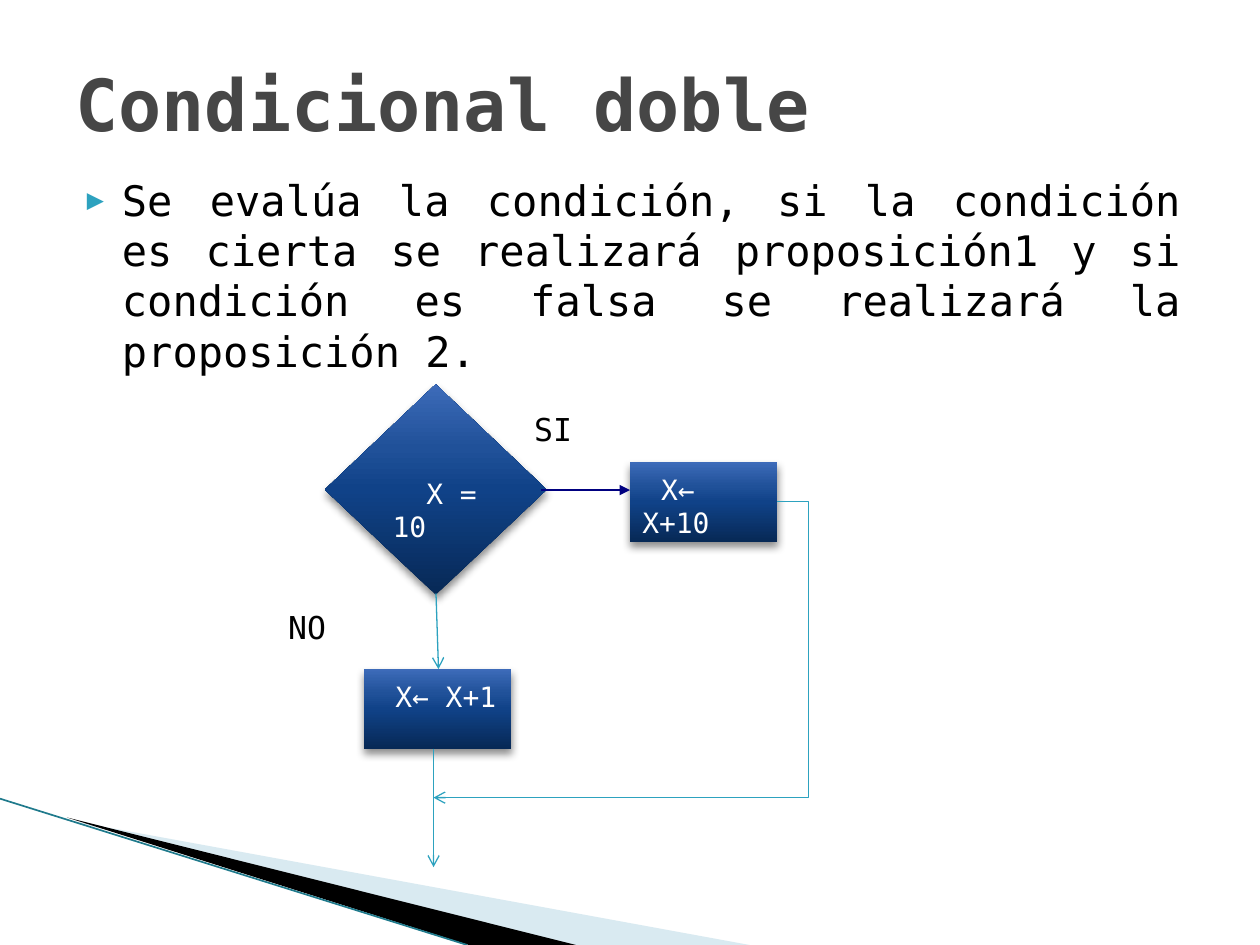
import lxml.etree
import pptx
import pptx.util
import pptx.dml.color
import pptx.enum.shapes
import pptx.enum.text
import pptx.oxml.ns

Cm = pptx.util.Cm
Pt = pptx.util.Pt
KIND = pptx.enum.shapes.MSO_SHAPE
LINK = pptx.enum.shapes.MSO_CONNECTOR
ALIGN = pptx.enum.text.PP_ALIGN
ANCHOR = pptx.enum.text.MSO_ANCHOR

FONT = "DejaVu Sans Mono"
HUES = {"ink": "000000", "title": "464646", "white": "FFFFFF", "teal": "2DA2BF",
        "navy": "000080", "pale": "A0CBDC", "edge": "1F7A8C"}
BLEND = [(0, "072956"), (50, "104288"), (70, "205199"), (100, "3D6BB9")]

TITLE = "Condicional doble"
BODY = ("Se evalúa la condición, si la condición es cierta se realizará "
        "proposición1 y si condición es falsa se realizará la proposición 2.")
NODES = [
    (KIND.FLOWCHART_DECISION, (6.55, 7.75, 4.47, 4.24), "X = 10", 0.68, 0.79),
    (KIND.FLOWCHART_PROCESS, (12.7, 9.32, 2.97, 1.6), "X← X+10", 0.38, 0.2),
    (KIND.FLOWCHART_PROCESS, (7.34, 13.49, 2.97, 1.6), "X← X+1", 0.38, 0.2),
]
LABELS = [("SI", (10.52, 8.13, 1.98, 1.02)), ("NO", (5.56, 12.12, 1.98, 1.02))]
ARROWS = [
    (LINK.STRAIGHT, (10.9, 9.88, 12.7, 9.88), "navy", "triangle"),
    (LINK.ELBOW, (15.67, 10.11, 8.74, 16.08), "teal", "arrow"),
    (LINK.STRAIGHT, (8.79, 11.96, 8.84, 13.49), "teal", "arrow"),
    (LINK.STRAIGHT, (8.74, 15.09, 8.74, 17.48), "teal", "arrow"),
]
WEDGES = [
    ([(1.4, 16.54), (15.11, 19.05), (11.58, 19.05)], "pale", 40),
    ([(1.35, 16.48), (11.61, 19.05), (9.45, 19.05)], "ink", 100),
]


def hue(name):
    return pptx.dml.color.RGBColor.from_string(HUES[name])


def node(root, tag, **keys):
    item = lxml.etree.SubElement(root, pptx.oxml.ns.qn("a:" + tag))
    for key, val in keys.items():
        item.set(key, str(val))
    return item


def find(root, tag):
    return root.find(".//" + pptx.oxml.ns.qn("a:" + tag))


def write(shape, text, size=18, color="ink", bold=False, align=ALIGN.LEFT,
          anchor=ANCHOR.TOP, left=0, first=0, top=0.13, low=0.13, bullet=None):
    frame = shape.text_frame
    frame.word_wrap = True
    frame.vertical_anchor = anchor
    frame.margin_top, frame.margin_bottom = Cm(top), Cm(low)
    para = frame.paragraphs[0]
    para.alignment = align
    props = para._p.get_or_add_pPr()
    props.set("marL", str(Cm(left)))
    props.set("indent", str(Cm(first)))
    if bullet:
        node(node(props, "buClr"), "srgbClr", val=HUES["teal"])
        node(props, "buSzPct", val=68000)
        node(props, "buFont", typeface=FONT)
        node(props, "buChar", char=bullet)
    run = para.add_run()
    run.text = text
    run.font.name, run.font.size, run.font.bold = FONT, Pt(size), bold
    run.font.color.rgb = hue(color)


def box(slide, place):
    return slide.shapes.add_textbox(*map(Cm, place))


def wedge(slide, dots, color, alpha):
    dots = [(Cm(x), Cm(y)) for x, y in dots]
    form = slide.shapes.build_freeform(*dots[0])
    form.add_line_segments(dots[1:])
    shape = form.convert_to_shape()
    shape.shadow.inherit = False
    shape.fill.solid()
    shape.fill.fore_color.rgb = hue(color)
    shape.line.fill.background()
    if alpha < 100:
        node(find(shape._element.spPr, "srgbClr"), "alpha", val=alpha * 1000)


def link(slide, kind, ends, color, width=0.75, head=None):
    line = slide.shapes.add_connector(kind, *map(Cm, ends))
    line.line.color.rgb = hue(color)
    line.line.width = Pt(width)
    props = line._element.spPr
    if head:
        node(find(props, "ln"), "tailEnd", type=head)
    if kind == LINK.ELBOW:
        node(find(props, "avLst"), "gd", name="adj1", fmla="val -9200")
    node(props, "effectLst")


def step(slide, kind, place, text, first, top):
    shape = slide.shapes.add_shape(kind, *map(Cm, place))
    shape.fill.gradient()
    shape.fill.gradient_angle = 90
    shape.line.fill.background()
    shape.shadow.inherit = False
    props = shape._element.spPr
    stops = find(props, "gsLst")
    for old in list(stops):
        stops.remove(old)
    for pos, color in BLEND:
        node(node(stops, "gs", pos=pos * 1000), "srgbClr", val=color)
    shade = node(find(props, "effectLst"), "outerShdw", blurRad=Pt(5),
                 dist=Pt(3), dir=90 * 60000, rotWithShape=0)
    node(node(shade, "srgbClr", val=HUES["ink"]), "alpha", val=45000)
    write(shape, text, size=16, color="white", first=first, top=top, low=0)


def main():
    deck = pptx.Presentation()
    deck.slide_width, deck.slide_height = Cm(25.4), Cm(19.05)
    slide = deck.slides.add_slide(deck.slide_layouts[6])
    for dots, color, alpha in WEDGES:
        wedge(slide, dots, color, alpha)
    link(slide, LINK.STRAIGHT, (0, 16.1, 9.42, 19.05), "edge", width=0.95)
    write(box(slide, (1.19, 3.38, 22.86, 3.3)), BODY, size=24,
          align=ALIGN.JUSTIFY, left=1.02, first=-0.71, bullet="▶")
    write(box(slide, (1.27, 0.76, 22.86, 2.62)), TITLE, size=41,
          color="title", bold=True, anchor=ANCHOR.MIDDLE)
    for item in NODES:
        step(slide, *item)
    for text, place in LABELS:
        write(box(slide, place), text)
    for kind, ends, color, head in ARROWS:
        link(slide, kind, ends, color, head=head)
    deck.save("out.pptx")


if __name__ == "__main__":
    main()
